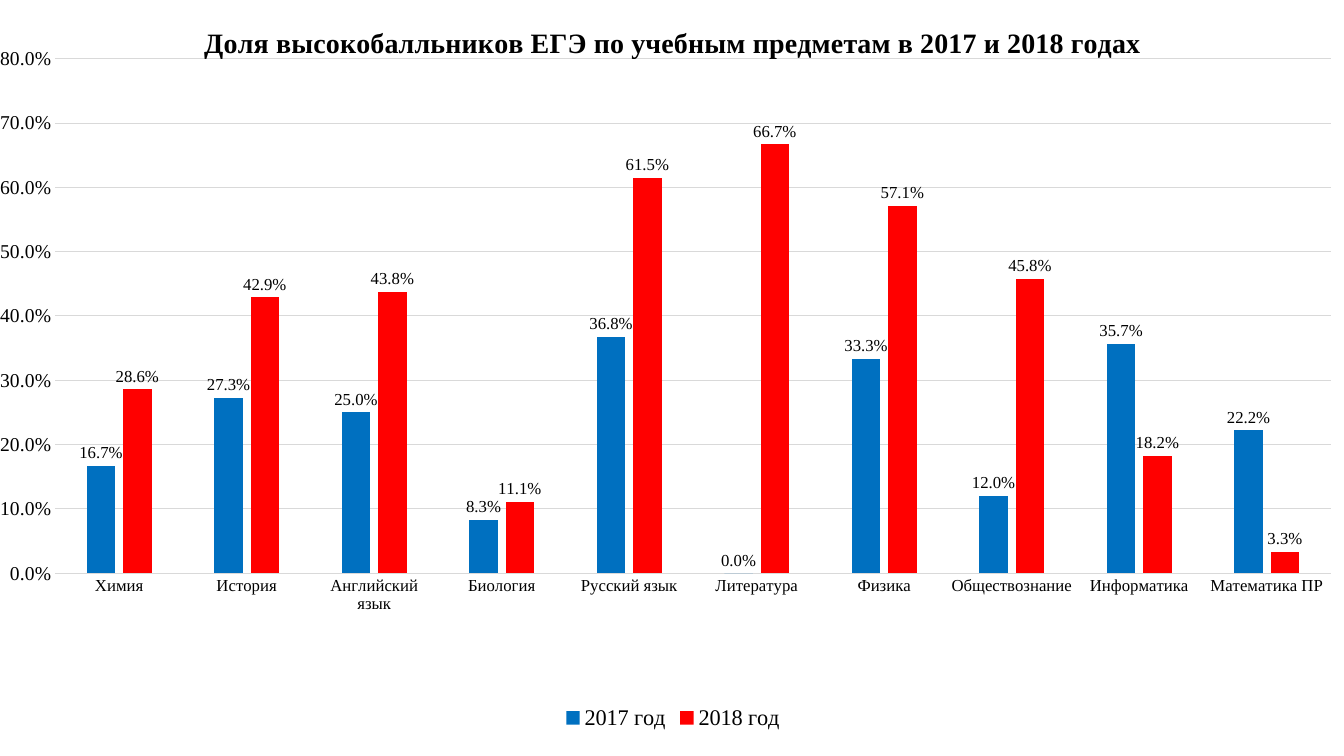
import pptx
import pptx.chart.data
import pptx.dml.color
import pptx.enum.chart
import pptx.oxml
import pptx.oxml.ns
import pptx.util
from pptx.util import Cm

FACE = "Times New Roman"
HUES = {"text": "000000", "grid": "D9D9D9", "2017 год": "0070C0", "2018 год": "FF0000"}
TITLE = "Доля высокобалльников ЕГЭ по учебным предметам в 2017 и 2018 годах"
RATES = {
    "Химия": (0.167, 0.286),
    "История": (0.273, 0.429),
    "Английский язык": (0.25, 0.438),
    "Биология": (0.083, 0.111),
    "Русский язык": (0.368, 0.615),
    "Литература": (0, 0.667),
    "Физика": (0.333, 0.571),
    "Обществознание": (0.12, 0.458),
    "Информатика": (0.357, 0.182),
    "Математика ПР": (0.222, 0.033),
}
YEARS = ("2017 год", "2018 год")
SHARE = "0.0%"


def tint(name):
    return pptx.dml.color.RGBColor.from_string(HUES[name])


def style(font, size, bold=False):
    font.name = FACE
    font.size = pptx.util.Pt(size)
    font.bold = bold
    font.color.rgb = tint("text")


def rule(line):
    line.color.rgb = tint("grid")
    line.width = pptx.util.Pt(0.75)


def fix_plot(chart, x, y, w, h):
    """Pin the inner plot area to fractions of the chart's box."""
    area = chart._chartSpace.chart.plotArea
    for old in area.findall(pptx.oxml.ns.qn("c:layout")):
        area.remove(old)
    sizes = "".join(f'<c:{tag} val="{val}"/>' for tag, val in zip("xywh", (x, y, w, h)))
    area.insert(0, pptx.oxml.parse_xml(
        f'<c:layout {pptx.oxml.ns.nsdecls("c")}><c:manualLayout>'
        '<c:layoutTarget val="inner"/><c:xMode val="edge"/><c:yMode val="edge"/>'
        f'{sizes}</c:manualLayout></c:layout>'))


def set_axes(chart):
    enum = pptx.enum.chart
    for axis, size in ((chart.category_axis, 12), (chart.value_axis, 14)):
        axis.major_tick_mark = axis.minor_tick_mark = enum.XL_TICK_MARK.NONE
        style(axis.tick_labels.font, size)
    rule(chart.category_axis.format.line)
    rates = chart.value_axis
    rates.minimum_scale, rates.maximum_scale, rates.major_unit = 0, 0.8, 0.1
    rates.format.line.fill.background()
    rates.has_major_gridlines = True
    rule(rates.major_gridlines.format.line)
    rates.tick_labels.number_format = SHARE
    rates.tick_labels.number_format_is_linked = False


def set_bars(plot):
    plot.gap_width, plot.overlap = 219, -27
    plot.vary_by_categories = False
    for bars in plot.series:
        bars.format.fill.solid()
        bars.format.fill.fore_color.rgb = tint(bars.name)
        bars.invert_if_negative = False
        tags = bars.data_labels
        tags.show_value = True
        tags.position = pptx.enum.chart.XL_LABEL_POSITION.OUTSIDE_END
        tags.number_format = SHARE
        tags.number_format_is_linked = False
        style(tags.font, 12)


def add_rates(slide, left, top, width, height):
    data = pptx.chart.data.CategoryChartData(number_format=SHARE)
    data.categories = list(RATES)
    for year, vals in zip(YEARS, zip(*RATES.values())):
        data.add_series(year, vals)
    kind = pptx.enum.chart.XL_CHART_TYPE.COLUMN_CLUSTERED
    chart = slide.shapes.add_chart(kind, left, top, width, height, data).chart
    style(chart.font, 10)

    chart.has_title = True
    chart.chart_title.include_in_layout = True
    head = chart.chart_title.text_frame
    head.text = TITLE
    style(head.paragraphs[0].font, 20, bold=True)
    style(head.paragraphs[0].runs[0].font, 20, bold=True)

    chart.has_legend = True
    chart.legend.position = pptx.enum.chart.XL_LEGEND_POSITION.BOTTOM
    chart.legend.include_in_layout = False
    style(chart.legend.font, 16)

    set_axes(chart)
    set_bars(chart.plots[0])
    fix_plot(chart, 0.04, 0.08, 0.95, 0.7)


def main():
    deck = pptx.Presentation()
    deck.slide_width, deck.slide_height = Cm(33.87), Cm(19.05)
    slide = deck.slides.add_slide(deck.slide_layouts[6])
    add_rates(slide, 0, 0, deck.slide_width, Cm(18.52))
    deck.save("out.pptx")


if __name__ == "__main__":
    main()
